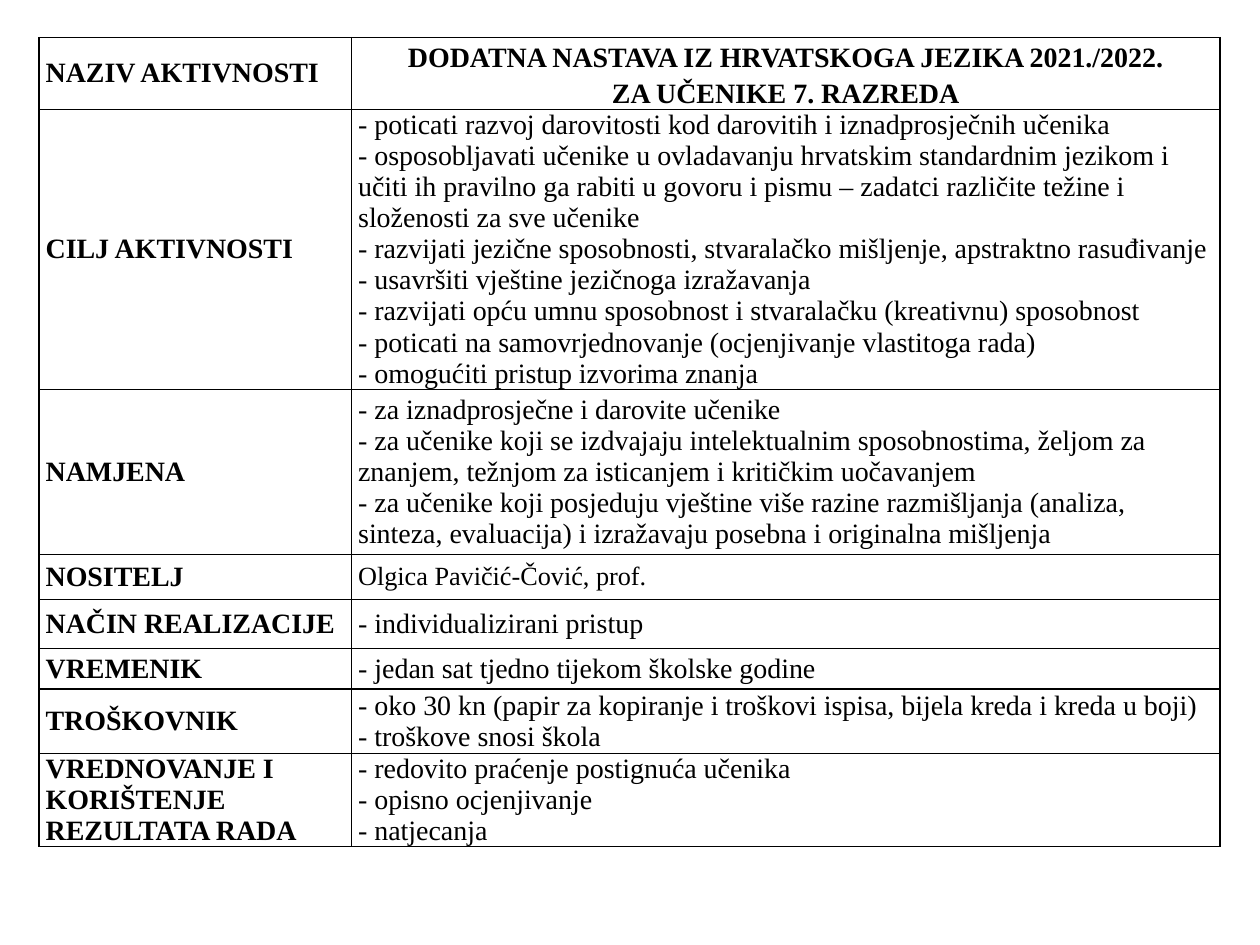
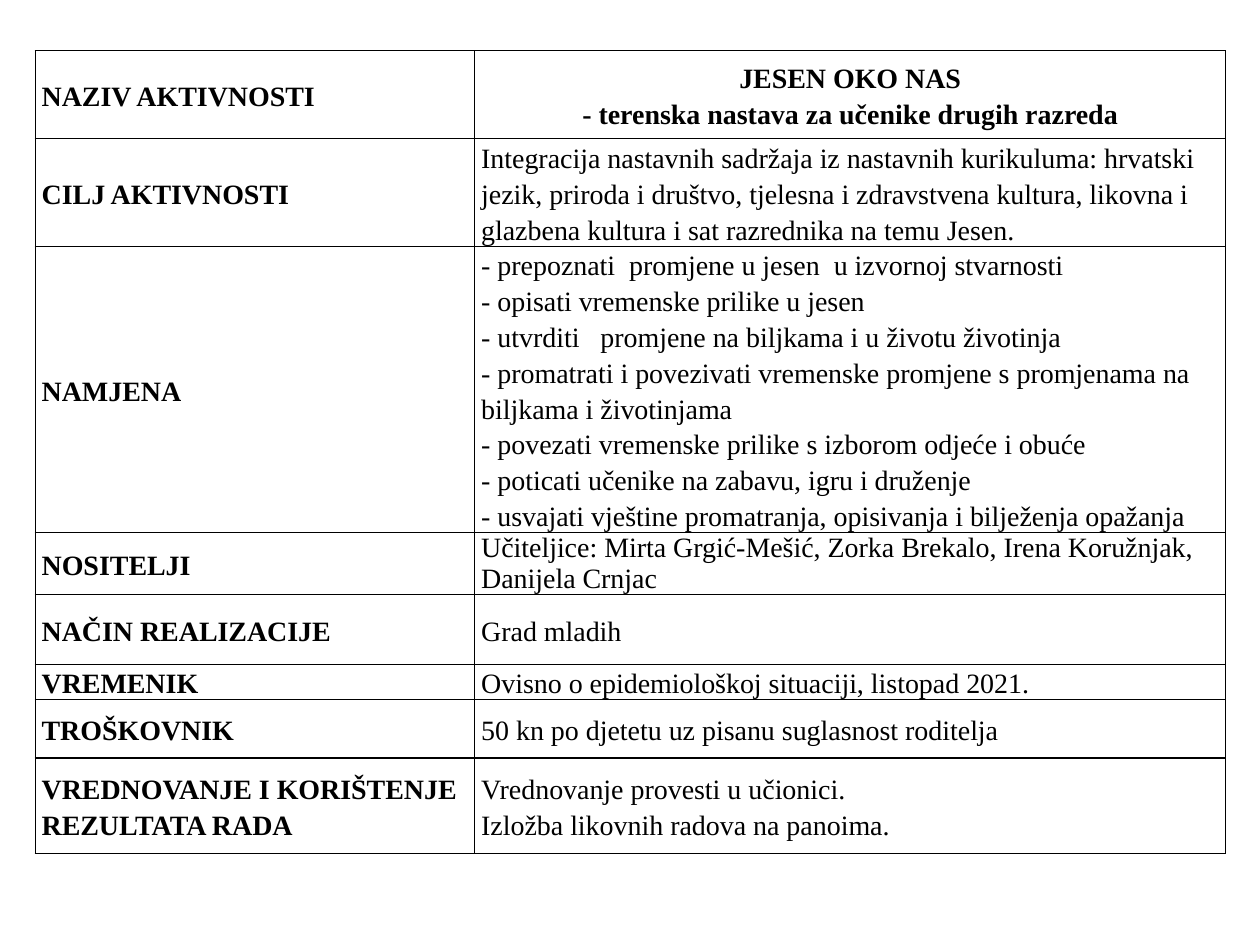
"""Build two slides, each a table describing one school activity."""
import dataclasses

import lxml.etree
import pptx
import pptx.dml.color
import pptx.enum.text
import pptx.oxml.ns
import pptx.util
from pptx.util import Cm


@dataclasses.dataclass(frozen=True)
class Theme:
    font: str = "Times New Roman"
    ink: str = "000000"
    text_size: int = 16
    small_size: int = 15
    single: float = 1.0
    loose: float = 1.15
    side_margin: float = 0.13


theme = Theme()


def draw_borders(cell, width):
    """Outline the four sides of a cell."""
    properties = cell._tc.get_or_add_tcPr()
    for side in ("a:lnL", "a:lnR", "a:lnT", "a:lnB"):
        line = lxml.etree.SubElement(properties, pptx.oxml.ns.qn(side), w=str(pptx.util.Pt(width)))
        fill = lxml.etree.SubElement(line, pptx.oxml.ns.qn("a:solidFill"))
        lxml.etree.SubElement(fill, pptx.oxml.ns.qn("a:srgbClr"), val=theme.ink)


def write_cell(cell, lines, bold, centred, spacing, size):
    """Fill a cell with one paragraph per line."""
    cell.vertical_anchor = pptx.enum.text.MSO_ANCHOR.MIDDLE
    cell.margin_left = cell.margin_right = Cm(theme.side_margin)
    cell.margin_top = cell.margin_bottom = 0
    cell.text = "\n".join(lines)
    for paragraph in cell.text_frame.paragraphs:
        align = pptx.enum.text.PP_ALIGN
        paragraph.alignment = align.CENTER if centred else align.LEFT
        paragraph.line_spacing = spacing
        paragraph.font.name = theme.font
        paragraph.font.size = pptx.util.Pt(size)
        paragraph.font.bold = bold
        paragraph.font.color.rgb = pptx.dml.color.RGBColor.from_string(theme.ink)


extra_lessons = {
    "place": (0.79, 0.76, 23.8, 17.83),
    "columns": (6.3, 17.5),
    "border": 1,
    "spacing": theme.single,
    "value_spacing": {0: theme.loose},
    "value_size": {3: theme.small_size},
    "rows": [
        (1.19, "NAZIV AKTIVNOSTI", [
            "DODATNA NASTAVA IZ HRVATSKOGA JEZIKA 2021./2022.",
            "ZA UČENIKE 7. RAZREDA",
        ]),
        (3.58, "CILJ AKTIVNOSTI", [
            "- poticati razvoj darovitosti kod darovitih i iznadprosječnih učenika",
            "- osposobljavati učenike u ovladavanju hrvatskim standardnim jezikom i učiti ih "
            "pravilno ga rabiti u govoru i pismu – zadatci različite težine i složenosti za sve učenike",
            "- razvijati jezične sposobnosti, stvaralačko mišljenje, apstraktno rasuđivanje",
            "- usavršiti vještine jezičnoga izražavanja",
            "- razvijati opću umnu sposobnost i stvaralačku (kreativnu) sposobnost",
            "- poticati na samovrjednovanje (ocjenjivanje vlastitoga rada)",
            "- omogućiti pristup izvorima znanja",
        ]),
        (3.33, "NAMJENA", [
            "- za iznadprosječne i darovite učenike",
            "- za učenike koji se izdvajaju intelektualnim sposobnostima, željom za znanjem, "
            "težnjom za isticanjem i kritičkim uočavanjem",
            "- za učenike koji posjeduju vještine više razine razmišljanja (analiza, sinteza, "
            "evaluacija) i izražavaju posebna i originalna mišljenja",
        ]),
        (0.91, "NOSITELJ", ["Olgica Pavičić-Čović, prof."]),
        (0.99, "NAČIN REALIZACIJE", ["- individualizirani pristup"]),
        (0.81, "VREMENIK", ["- jedan sat tjedno tijekom školske godine"]),
        (1.3, "TROŠKOVNIK", [
            "- oko 30 kn (papir za kopiranje i troškovi ispisa, bijela kreda i kreda u boji)",
            "- troškove snosi škola",
        ]),
        (1.78, "VREDNOVANJE I KORIŠTENJE REZULTATA RADA", [
            "- redovito praćenje postignuća učenika",
            "- opisno ocjenjivanje",
            "- natjecanja",
        ]),
    ],
}

autumn_trip = {
    "place": (0.71, 1.02, 24, 16.97),
    "columns": (8.86, 15.14),
    "border": 0.75,
    "spacing": theme.loose,
    "value_spacing": {3: theme.single},
    "value_size": {},
    "rows": [
        (1.78, "NAZIV AKTIVNOSTI", [
            "JESEN OKO NAS",
            "- terenska nastava za učenike drugih razreda",
        ]),
        (1.45, "CILJ AKTIVNOSTI", [
            "Integracija nastavnih sadržaja iz nastavnih kurikuluma: hrvatski jezik, priroda i "
            "društvo, tjelesna i zdravstvena kultura, likovna i glazbena kultura i sat razrednika "
            "na temu Jesen.",
        ]),
        (3.89, "NAMJENA", [
            "- prepoznati  promjene u jesen  u izvornoj stvarnosti",
            "- opisati vremenske prilike u jesen",
            "- utvrditi   promjene na biljkama i u životu životinja",
            "- promatrati i povezivati vremenske promjene s promjenama na biljkama i životinjama",
            "- povezati vremenske prilike s izborom odjeće i obuće",
            "- poticati učenike na zabavu, igru i druženje",
            "- usvajati vještine promatranja, opisivanja i bilježenja opažanja",
        ]),
        (1.04, "NOSITELJI", [
            "Učiteljice: Mirta Grgić-Mešić, Zorka Brekalo, Irena Koružnjak, Danijela Crnjac",
        ]),
        (1.4, "NAČIN REALIZACIJE", ["Grad mladih"]),
        (0.61, "VREMENIK", ["Ovisno o epidemiološkoj situaciji, listopad 2021."]),
        (1.17, "TROŠKOVNIK", ["50 kn po djetetu uz pisanu suglasnost roditelja"]),
        (1.93, "VREDNOVANJE I KORIŠTENJE REZULTATA RADA", [
            "Vrednovanje provesti u učionici.",
            "Izložba likovnih radova na panoima.",
        ]),
    ],
}

presentation = pptx.Presentation()
presentation.slide_width = Cm(25.4)
presentation.slide_height = Cm(19.05)
blank_layout = presentation.slide_layouts[6]

for activity in (extra_lessons, autumn_trip):
    slide = presentation.slides.add_slide(blank_layout)
    left, top, width, height = (Cm(length) for length in activity["place"])
    frame = slide.shapes.add_table(len(activity["rows"]), 2, left, top, width, height)
    overview = frame.table
    overview.first_row = overview.horz_banding = False
    for column, column_width in zip(overview.columns, activity["columns"]):
        column.width = Cm(column_width)

    for index, (row_height, label, details) in enumerate(activity["rows"]):
        overview.rows[index].height = Cm(row_height)
        label_cell, details_cell = overview.rows[index].cells
        is_heading = index == 0
        spacing = activity["spacing"]
        write_cell(label_cell, [label], True, False, spacing, theme.text_size)
        write_cell(details_cell, details, is_heading, is_heading,
                   activity["value_spacing"].get(index, spacing),
                   activity["value_size"].get(index, theme.text_size))
        for cell in (label_cell, details_cell):
            draw_borders(cell, activity["border"])
            cell.fill.background()
    frame.height = height

presentation.save("out.pptx")
